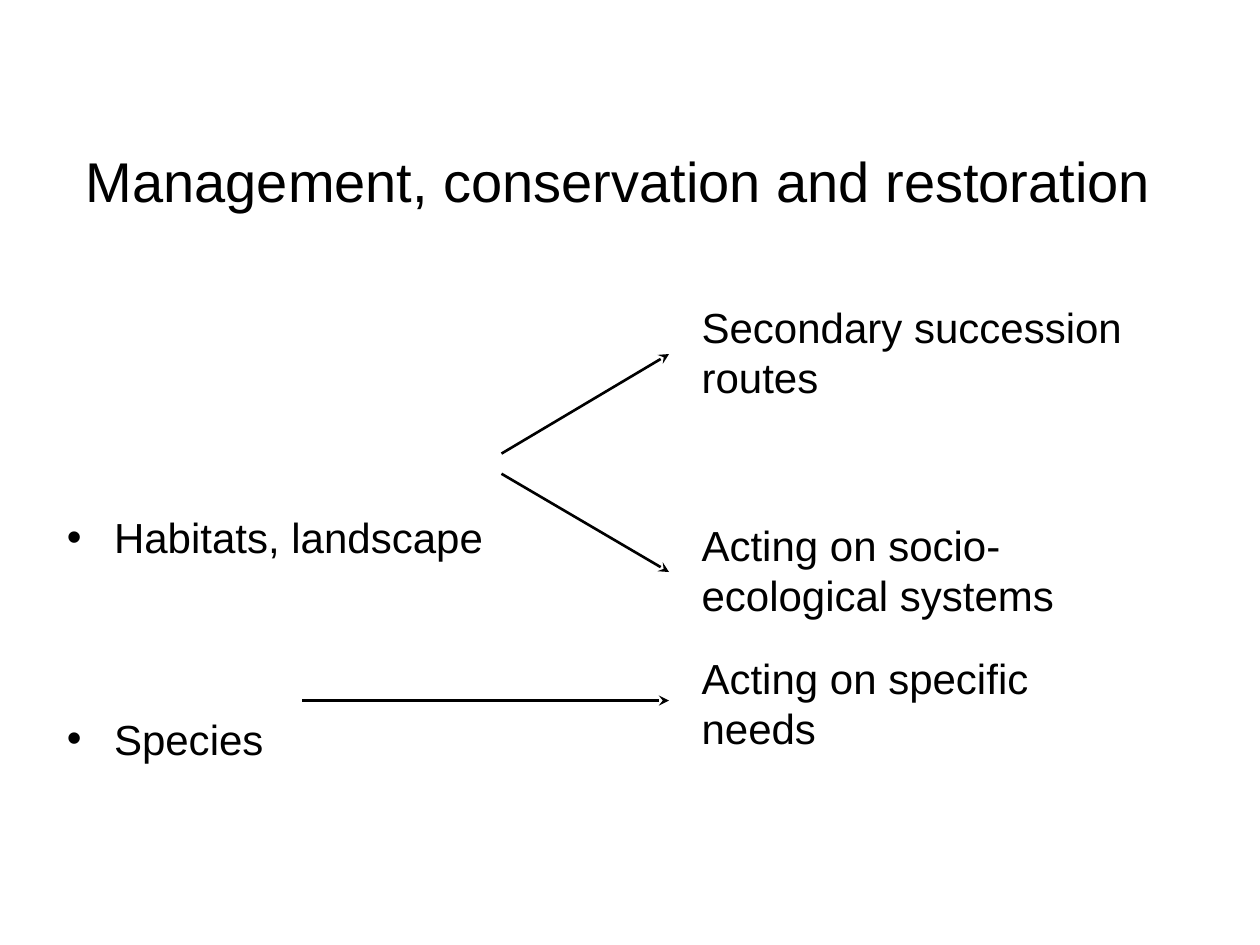
from dataclasses import dataclass

from lxml import etree
from pptx import Presentation
from pptx import util as u
from pptx.dml.color import RGBColor
from pptx.enum import shapes, text
from pptx.oxml.ns import qn


@dataclass(frozen=True)
class Theme:
    font: str = "Arial"
    ink: RGBColor = RGBColor(0, 0, 0)
    head: int = 32
    body: int = 24
    line: float = 1.5


@dataclass(frozen=True)
class Box:
    left: float
    top: float
    width: float
    height: float


@dataclass(frozen=True)
class Arrow:
    left: float
    start: float
    end: float


@dataclass(frozen=True)
class Label:
    words: str
    top: float


THEME = Theme()
TIP = 5.31  # every arrow ends here
COLUMN = 5.47  # left edge of the actions

TOPICS = ["Habitats, landscape", "Species"]
ACTIONS = [
    Label("Secondary succession routes", 2.34),
    Label("Acting on socio-ecological systems", 4.07),
    Label("Acting on specific needs", 5.13),
]
ARROWS = [Arrow(3.98, 3.6, 2.81), Arrow(3.98, 3.76, 4.54), Arrow(2.4, 5.56, 5.56)]


def place(shape, box: Box) -> None:
    shape.left, shape.top = u.Inches(box.left), u.Inches(box.top)
    shape.width, shape.height = u.Inches(box.width), u.Inches(box.height)


def write(shape, lines: list[str], size: int) -> None:
    frame = shape.text_frame
    frame.word_wrap = True
    frame.auto_size = text.MSO_AUTO_SIZE.NONE
    frame.vertical_anchor = text.MSO_ANCHOR.TOP
    frame.text = "\n".join(lines)
    for para in frame.paragraphs:
        para.space_before = u.Pt(0)
        para.font.name = THEME.font
        para.font.size = u.Pt(size)
        para.font.color.rgb = THEME.ink


def draw_label(slide, label: Label) -> None:
    shape = slide.shapes.add_textbox(0, 0, 0, 0)
    place(shape, Box(COLUMN, label.top, 3.54, 0.91))
    write(shape, [label.words], THEME.body)


def draw_arrow(slide, arrow: Arrow) -> None:
    ends = [u.Inches(n) for n in (arrow.left, arrow.start, TIP, arrow.end)]
    link = slide.shapes.add_connector(shapes.MSO_CONNECTOR.STRAIGHT, *ends)
    link.line.color.rgb = THEME.ink
    link.line.width = u.Pt(THEME.line)
    # Arrowhead, and no shadow
    etree.SubElement(link.line._get_or_add_ln(), qn("a:tailEnd"), type="stealth")
    etree.SubElement(link._element.spPr, qn("a:effectLst"))


def main() -> None:
    deck = Presentation()
    deck.slide_width, deck.slide_height = u.Inches(10), u.Inches(7.5)
    slide = deck.slides.add_slide(deck.slide_layouts[1])

    # Title
    title = slide.shapes.title
    place(title, Box(0.18, 1.11, 9.46, 0.51))
    write(title, ["Management, conservation and restoration"], THEME.head)

    # Topics, widely spaced
    body = slide.placeholders[1]
    place(body, Box(0.43, 2.81, 4.1, 3.01))
    write(body, TOPICS, THEME.body)
    for para in body.text_frame.paragraphs:
        para.line_spacing = 4.0

    # Arrows from topics to actions
    for arrow in ARROWS:
        draw_arrow(slide, arrow)
    for label in ACTIONS:
        draw_label(slide, label)

    deck.save("out.pptx")


if __name__ == "__main__":
    main()
